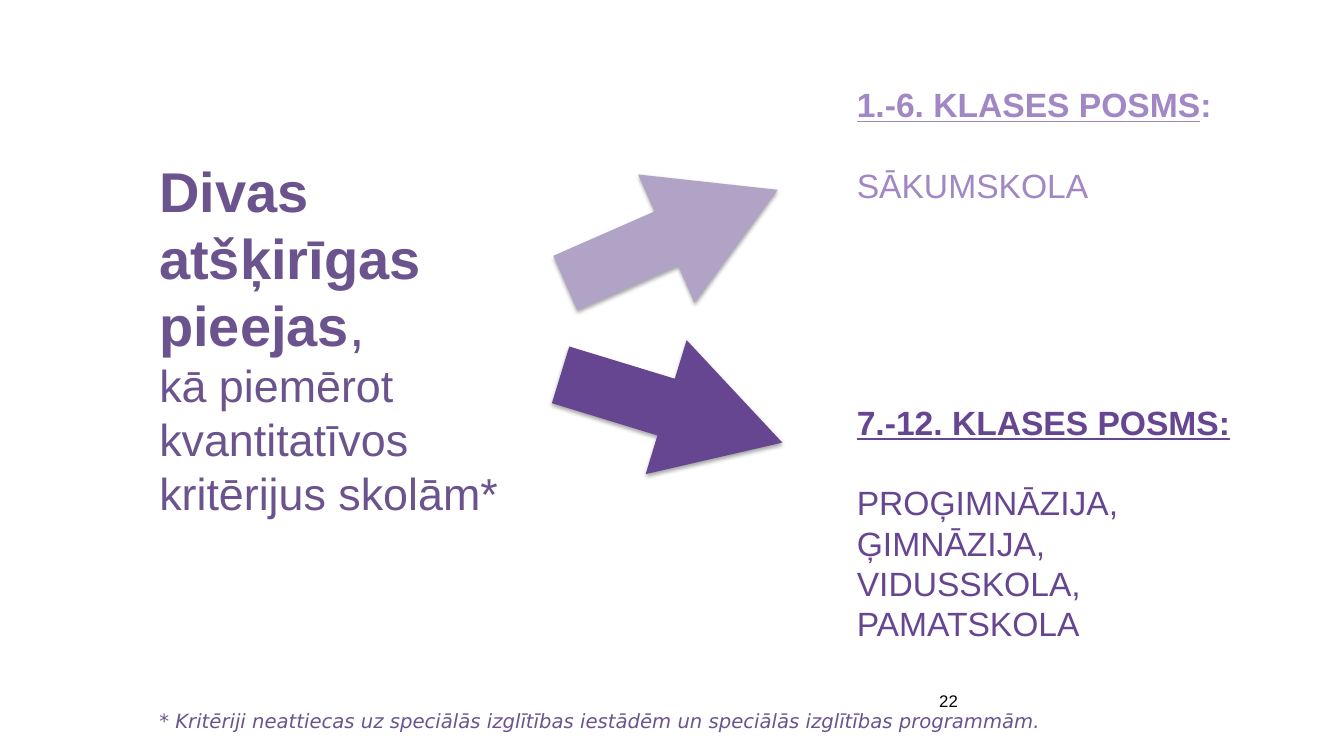
from dataclasses import dataclass

from lxml.etree import SubElement
from pptx import Presentation
from pptx.dml.color import RGBColor
from pptx.enum.shapes import MSO_SHAPE
from pptx.enum.text import MSO_ANCHOR, PP_ALIGN
from pptx.oxml.ns import qn
from pptx.util import Inches, Pt


@dataclass(frozen=True)
class Theme:
    """Colours, fonts and type sizes of the slide."""
    primary: str = "A287C5"
    primary_arrow: str = "B1A3C5"
    secondary: str = "664690"
    statement: str = "6B548D"
    black: str = "000000"
    font: str = "Arial"
    note_font: str = "DejaVu Sans"
    title_size: int = 40
    subtitle_size: int = 32
    stage_size: int = 24
    note_size: int = 14
    number_size: int = 12


THEME = Theme()


def add_run(paragraph, text, *, size, color, font=THEME.font,
            bold=False, italic=False, underline=False):
    """Append formatted text to a paragraph."""
    run = paragraph.add_run()
    run.text = text
    run.font.size = Pt(size)
    run.font.name = font
    run.font.bold = bold
    run.font.italic = italic
    run.font.underline = underline
    run.font.color.rgb = RGBColor.from_string(color)


def add_text_frame(slide, left, top, width, height, *, inset=0.05,
                   anchor=MSO_ANCHOR.TOP, wrap=True):
    """Add a text box and return its empty text frame."""
    frame = slide.shapes.add_textbox(
        Inches(left), Inches(top), Inches(width), Inches(height)).text_frame
    frame.margin_left = frame.margin_right = Inches(inset)
    frame.margin_top = frame.margin_bottom = Inches(inset)
    frame.vertical_anchor = anchor
    frame.word_wrap = wrap
    return frame


def add_arrow(slide, top, rotation, color):
    """Add a rotated block arrow with a soft shadow below it."""
    arrow = slide.shapes.add_shape(
        MSO_SHAPE.RIGHT_ARROW, Inches(5.51), Inches(top), Inches(2.3), Inches(1.39))
    arrow.adjustments[0] = 0.423
    arrow.adjustments[1] = 0.867
    arrow.rotation = rotation
    arrow.fill.solid()
    arrow.fill.fore_color.rgb = RGBColor.from_string(color)
    arrow.line.fill.background()
    arrow.shadow.inherit = False
    effects = arrow.element.spPr.find(qn("a:effectLst"))
    shadow = SubElement(effects, qn("a:outerShdw"), blurRad=str(Pt(3)),
                        dist=str(Pt(1.8)), dir="5400000", rotWithShape="0")
    shadow_color = SubElement(shadow, qn("a:srgbClr"), val=THEME.black)
    SubElement(shadow_color, qn("a:alpha"), val="35000")


def add_stage(slide, top, height, heading, schools, color, colon_underlined):
    """Add a school stage: underlined heading and its school types."""
    frame = add_text_frame(slide, 8.4, top, 4.14, height, inset=0.1,
                           anchor=MSO_ANCHOR.MIDDLE)
    title = frame.paragraphs[0]
    add_run(title, heading, size=THEME.stage_size, color=color, bold=True, underline=True)
    add_run(title, ":", size=THEME.stage_size, color=color, bold=True,
            underline=colon_underlined)
    body = frame.add_paragraph()
    body.space_before = Pt(1.2 * THEME.stage_size)
    add_run(body, schools, size=THEME.stage_size, color=color)


def add_statement(slide):
    """Add the main statement on the left."""
    frame = add_text_frame(slide, 1.53, 1.5, 4.14, 3.74)
    title = frame.paragraphs[0]
    add_run(title, "Divas atšķirīgas pieejas", size=THEME.title_size,
            color=THEME.statement, bold=True)
    add_run(title, ",", size=THEME.title_size, color=THEME.statement)
    add_run(frame.add_paragraph(), "kā piemērot kvantitatīvos kritērijus skolām*",
            size=THEME.subtitle_size, color=THEME.statement)


def add_footer(slide):
    """Add the footnote and the slide number."""
    note = add_text_frame(slide, 1.53, 6.98, 9.35, 0.34)
    add_run(note.paragraphs[0],
            "* Kritēriji neattiecas uz speciālās izglītības iestādēm "
            "un speciālās izglītības programmām.",
            size=THEME.note_size, color=THEME.statement, font=THEME.note_font, italic=True)
    number = add_text_frame(slide, 6.44, 6.75, 3.11, 0.4, anchor=MSO_ANCHOR.MIDDLE)
    number.paragraphs[0].alignment = PP_ALIGN.RIGHT
    add_run(number.paragraphs[0], "22", size=THEME.number_size, color=THEME.black)


def main():
    """Build and save the slide."""
    deck = Presentation()
    deck.slide_width, deck.slide_height = Inches(13.33), Inches(7.5)
    slide = deck.slides.add_slide(deck.slide_layouts[6])
    add_arrow(slide, 1.65, 336.3, THEME.primary_arrow)
    add_arrow(slide, 3.36, 17, THEME.secondary)
    add_stage(slide, 3.87, 2.63, "7.-12. KLASES POSMS",
              "PROĢIMNĀZIJA, ĢIMNĀZIJA, VIDUSSKOLA, PAMATSKOLA", THEME.secondary, True)
    add_stage(slide, 0.73, 1.41, "1.-6. KLASES POSMS", "SĀKUMSKOLA", THEME.primary, False)
    add_statement(slide)
    add_footer(slide)
    deck.save("out.pptx")


if __name__ == "__main__":
    main()
